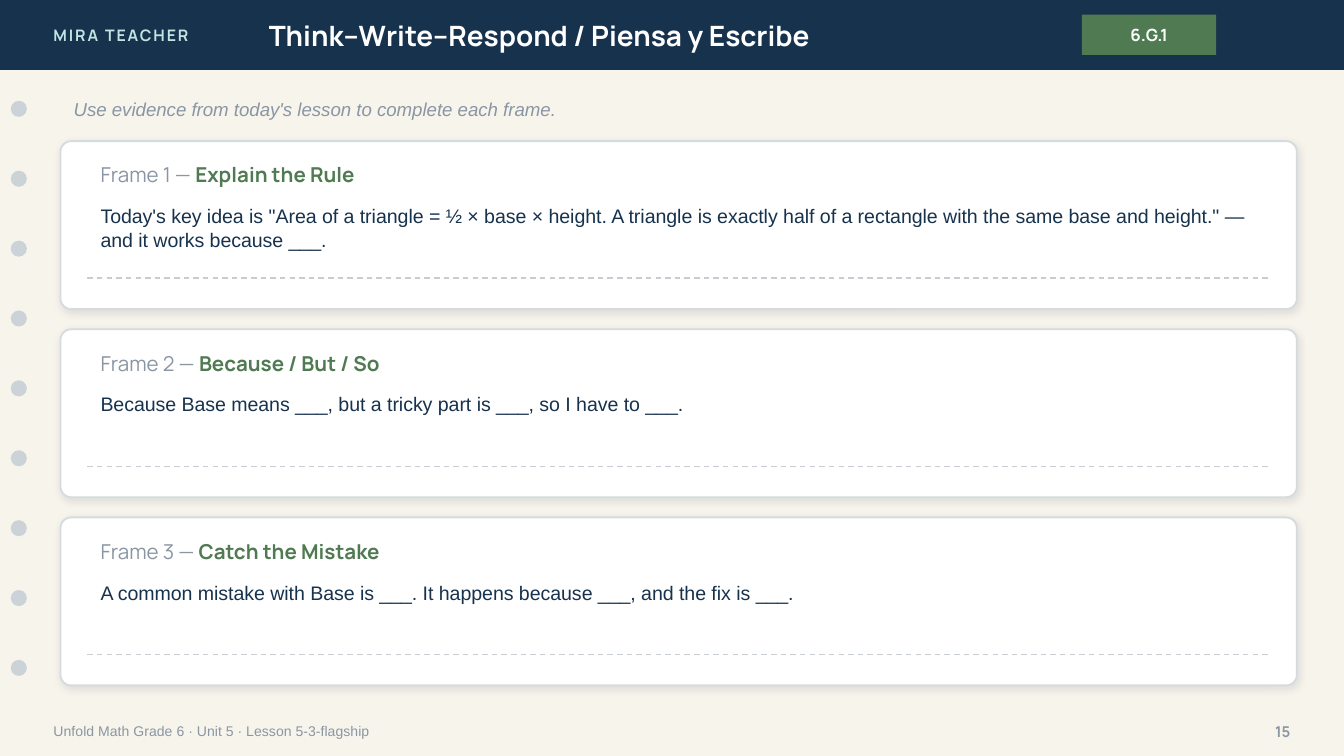
from lxml import etree
from pptx import Presentation
from pptx.dml.color import RGBColor
from pptx.enum.dml import MSO_LINE
from pptx.enum.shapes import MSO_CONNECTOR, MSO_SHAPE
from pptx.enum.text import MSO_ANCHOR, MSO_AUTO_SIZE, PP_ALIGN
from pptx.oxml.ns import qn
from pptx.util import Inches, Pt

RECT, ROUNDED, OVAL = MSO_SHAPE.RECTANGLE, MSO_SHAPE.ROUNDED_RECTANGLE, MSO_SHAPE.OVAL
STRAIGHT, DASH = MSO_CONNECTOR.STRAIGHT, MSO_LINE.DASH
TOP, MIDDLE = MSO_ANCHOR.TOP, MSO_ANCHOR.MIDDLE
LEFT, CENTER, RIGHT = PP_ALIGN.LEFT, PP_ALIGN.CENTER, PP_ALIGN.RIGHT
NO_AUTOFIT = MSO_AUTO_SIZE.NONE

COLORS = {
    "paper": "F7F4EC", "navy": "17324D", "mint": "BFE6E2", "white": "FFFFFF",
    "green": "4F7A52", "hole": "CBD3D9", "muted": "8A96A3", "border": "D6DBDF",
    "rule": "C7CDD2", "shadow": "1C2E42",
}
HEADING, BODY = "Manrope", "Arial"

FRAMES = [
    ("Explain the Rule",
     "Today's key idea is \"Area of a triangle = ½ × base × height. A triangle is exactly "
     "half of a rectangle with the same base and height.\" — and it works because ___."),
    ("Because / But / So",
     "Because Base means ___, but a tricky part is ___, so I have to ___."),
    ("Catch the Mistake",
     "A common mistake with Base is ___. It happens because ___, and the fix is ___."),
]


def rgb(name):
    """Return the palette colour as an RGBColor."""
    return RGBColor.from_string(COLORS[name])


def style_run(run, font, size, color, bold=False, italic=False):
    """Set the typeface, size, colour and emphasis of a run."""
    run.font.name, run.font.size = font, Pt(size)
    run.font.bold, run.font.italic = bold, italic
    run.font.color.rgb = rgb(color)


def write(shape, pieces, align=LEFT, anchor=MIDDLE):
    """Fill a shape with one paragraph of (text, style) pieces."""
    frame = shape.text_frame
    frame.word_wrap, frame.auto_size = True, NO_AUTOFIT
    frame.vertical_anchor = anchor
    paragraph = frame.paragraphs[0]
    paragraph.alignment = align
    for text, style in pieces:
        run = paragraph.add_run()
        run.text = text
        style_run(run, **style)


def add_label(slide, box, pieces, align=LEFT, anchor=MIDDLE):
    """Add a text box at a box given in inches."""
    label = slide.shapes.add_textbox(*map(Inches, box))
    write(label, pieces, align, anchor)
    return label


def add_block(slide, kind, box, fill):
    """Add a flat filled shape without outline or shadow."""
    block = slide.shapes.add_shape(kind, *map(Inches, box))
    block.shadow.inherit = False
    block.fill.solid()
    block.fill.fore_color.rgb = rgb(fill)
    block.line.fill.background()
    return block


def add_soft_shadow(shape):
    """Give a shape a faint shadow falling straight down."""
    effects = shape.element.spPr.find(qn("a:effectLst"))
    shadow = etree.SubElement(effects, qn("a:outerShdw"), blurRad=str(Pt(4)),
                              dist=str(Pt(1)), dir="5400000", algn="bl", rotWithShape="0")
    color = etree.SubElement(shadow, qn("a:srgbClr"), val=COLORS["shadow"])
    etree.SubElement(color, qn("a:alpha"), val="10000")


def add_header(slide, left, top, width, height):
    """Draw the top band with series name, title and standard badge."""
    add_block(slide, RECT, (left, top, width, height), "navy")
    series = add_label(slide, (left + 0.3, top, 2.4, height), [
        ("MIRA TEACHER", dict(font=HEADING, size=8.5, color="mint", bold=True))])
    series.text_frame.paragraphs[0].runs[0].font._element.set("spc", "100")

    title = slide.shapes.title
    title.left, title.top = Inches(left + 1.9), Inches(top)
    title.width, title.height = Inches(5.6), Inches(height)
    write(title, [("Think–Write–Respond / Piensa y Escribe",
                   dict(font=HEADING, size=15, color="white", bold=True))])
    series.element.addnext(title.element)

    badge = add_block(slide, RECT, (left + 8.05, top + 0.11, 1, 0.3), "green")
    write(badge, [("6.G.1", dict(font=HEADING, size=9, color="white", bold=True))], CENTER)


def add_binder_holes(slide, left, top, pitch, count):
    """Draw a column of evenly spaced punched holes."""
    for index in range(count):
        add_block(slide, OVAL, (left, top + index * pitch, 0.12, 0.12), "hole")


def add_footer(slide, left, top, width, height):
    """Write the lesson reference and the page number."""
    add_label(slide, (left, top, 7, height), [
        ("Unfold Math Grade 6 · Unit 5 · Lesson 5-3-flagship",
         dict(font=BODY, size=7.5, color="muted"))])
    add_label(slide, (left + width - 0.5, top, 0.5, height), [
        ("15", dict(font=HEADING, size=8, color="muted", bold=True))], RIGHT)


def add_frame_card(slide, left, top, width, height, number, name, prompt):
    """Draw one sentence-frame card with heading, prompt and writing line."""
    card = add_block(slide, ROUNDED, (left, top, width, height), "white")
    card.adjustments[0] = 0.064
    card.line.color.rgb = rgb("border")
    card.line.width = Pt(1)
    add_soft_shadow(card)

    inner_left, inner_width = left + 0.2, width - 0.4
    add_label(slide, (inner_left, top + 0.1, inner_width, 0.3), [
        (f"Frame {number} — ", dict(font=HEADING, size=11, color="muted")),
        (name, dict(font=HEADING, size=11, color="green", bold=True))])
    add_label(slide, (inner_left, top + 0.42, inner_width, 0.4), [
        (prompt, dict(font=BODY, size=10.5, color="navy"))], anchor=TOP)

    line_top = Inches(top + height - 0.23)
    writing_line = slide.shapes.add_connector(
        STRAIGHT, Inches(inner_left), line_top, Inches(left + width - 0.2), line_top)
    writing_line.line.color.rgb = rgb("rule")
    writing_line.line.width = Pt(0.75)
    writing_line.line.dash_style = DASH
    etree.SubElement(writing_line.element.spPr, qn("a:effectLst"))


def add_frames(slide, left, top, width, card_height, gap):
    """Stack the sentence-frame cards at equal gaps."""
    for index, (name, prompt) in enumerate(FRAMES):
        add_frame_card(slide, left, top + index * (card_height + gap), width,
                       card_height, index + 1, name, prompt)


def main():
    """Build and save the sentence-frames slide."""
    deck = Presentation()
    deck.slide_width = Inches(10)
    deck.slide_height = deck.slide_width * 9 // 16
    slide = deck.slides.add_slide(deck.slide_layouts.get_by_name("Title Only"))
    slide.background.fill.solid()
    slide.background.fill.fore_color.rgb = rgb("paper")

    add_header(slide, 0, 0, 10, 0.52)
    add_binder_holes(slide, 0.08, 0.75, pitch=0.52, count=9)
    add_footer(slide, 0.3, 5.3, 9.4, 0.28)
    add_label(slide, (0.45, 0.66, 9.2, 0.3), [
        ("Use evidence from today's lesson to complete each frame.",
         dict(font=BODY, size=10, color="muted", italic=True))])
    add_frames(slide, 0.45, 1.05, 9.2, card_height=1.25, gap=0.15)
    deck.save("out.pptx")


if __name__ == "__main__":
    main()
